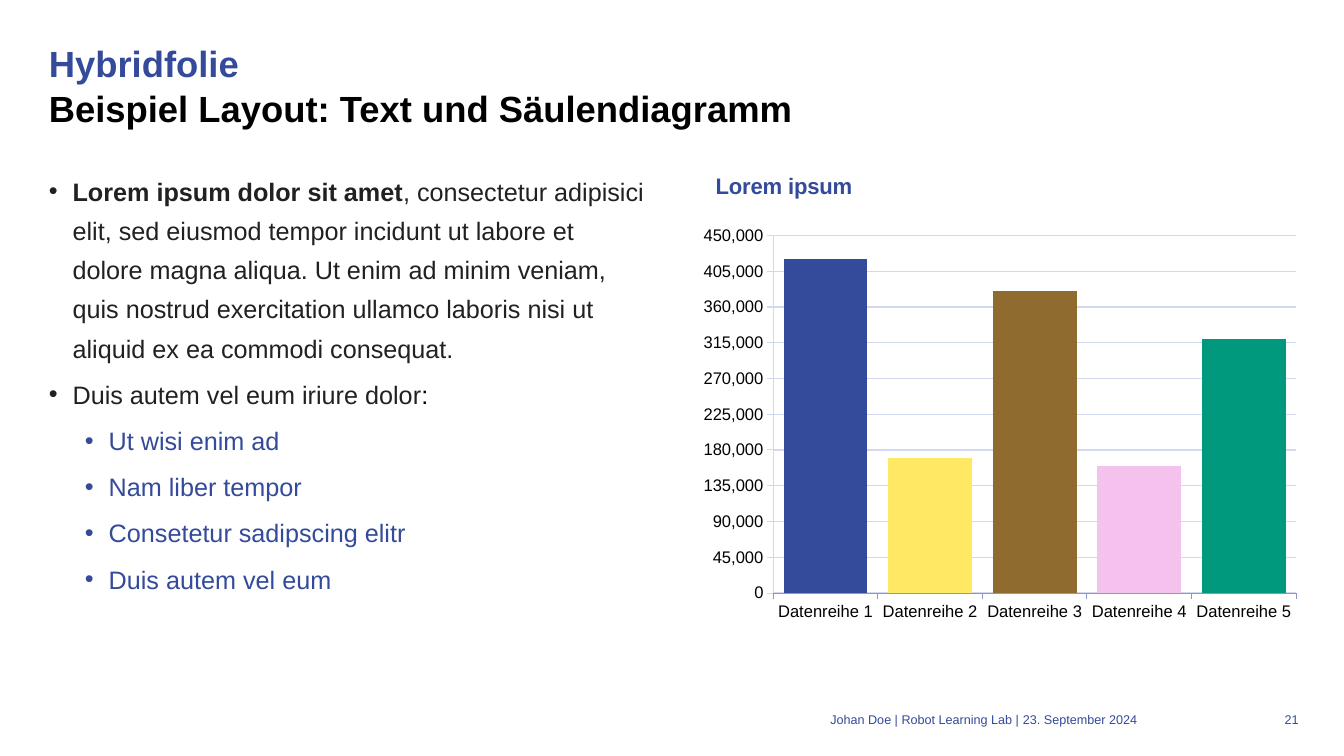
"""Build a slide with a bulleted text on the left and a column chart on the right."""
from pptx import Presentation
from pptx.chart.data import CategoryChartData
from pptx.dml.color import RGBColor
from pptx.enum.chart import XL_CHART_TYPE as ChartType, XL_TICK_MARK as Tick
from pptx.enum.text import MSO_ANCHOR as Anchor, MSO_AUTO_SIZE as AutoSize, PP_ALIGN as Align
from pptx.oxml.ns import qn
from pptx.util import Cm, Pt
from lxml.etree import SubElement

BLUE = RGBColor(0x34, 0x4A, 0x9A)
BLACK = RGBColor(0x00, 0x00, 0x00)
INK = RGBColor(0x20, 0x21, 0x22)
GRID = RGBColor(0xD2, 0xD8, 0xF0)
AXIS = RGBColor(0x8C, 0x96, 0xC8)
YELLOW = RGBColor(0xFF, 0xE8, 0x63)
BROWN = RGBColor(0x8F, 0x6B, 0x30)
PINK = RGBColor(0xF5, 0xC2, 0xED)
GREEN = RGBColor(0x00, 0x99, 0x7D)
SERIES = RGBColor(0xA2, 0xAD, 0xEB)
LEFT, CONTENT_TOP, COLUMN_WIDTH = Cm(1.23), Cm(4.22), Cm(15.01)


def style(font, size, color, bold=False):
    font.name, font.size, font.bold = "Arial", Pt(size), bold
    font.color.rgb = color


def set_frame(box, left, top, width, height, inset=0):
    box.left, box.top, box.width, box.height = left, top, width, height
    frame = box.text_frame
    frame.margin_left = inset
    frame.margin_top = frame.margin_right = frame.margin_bottom = 0
    frame.word_wrap, frame.auto_size = True, AutoSize.NONE
    frame.vertical_anchor = Anchor.TOP
    return frame


deck = Presentation()
deck.slide_width, deck.slide_height = Cm(33.87), Cm(19.05)
page = deck.slides.add_slide(deck.slide_layouts[1])

heading = set_frame(page.shapes.title, LEFT, Cm(1), Cm(31.5), Cm(2.69))
heading.text = "Hybridfolie\vBeispiel Layout: Text und Säulendiagramm"
para = heading.paragraphs[0]
para.alignment, para.line_spacing = Align.LEFT, Pt(32)
for span, color in zip(para.runs, (BLUE, BLACK)):
    style(span.font, 26, color, True)

bullets = [
    (0, [("Lorem ipsum dolor sit amet", INK, True),
         (", consectetur adipisici elit, sed eiusmod tempor incidunt ut labore et dolore magna "
          "aliqua. Ut enim ad minim veniam, quis nostrud exercitation ullamco laboris nisi ut "
          "aliquid ex ea commodi consequat.", INK, False)]),
    (0, [("Duis autem vel eum iriure dolor", INK, False), (":", BLACK, False)]),
    (1, [("Ut wisi enim ad", BLUE, False)]),
    (1, [("Nam liber tempor", BLUE, False)]),
    (1, [("Consetetur sadipscing elitr", BLUE, False)]),
    (1, [("Duis autem vel eum", BLUE, False)]),
]
body = set_frame(page.placeholders[1], LEFT, Cm(4.21), COLUMN_WIDTH, Cm(13))
for number, (level, parts) in enumerate(bullets):
    para = body.add_paragraph() if number else body.paragraphs[0]
    properties = para._p.get_or_add_pPr()
    properties.set("marL", str(Cm(0.6 + 0.91 * level)))
    properties.set("indent", str(-Cm(0.6)))
    SubElement(properties, qn("a:buChar")).set("char", "•")
    para.level, para.line_spacing = level, Pt(28)
    para.space_before = Pt(5 if number else 0)
    para.space_after = Pt(0)
    for text, color, bold in parts:
        span = para.add_run()
        span.text = text
        style(span.font, 18, color, bold)

data = CategoryChartData(number_format="#,##0")
data.categories = [f"Datenreihe {number}" for number in range(1, 6)]
data.add_series("Series 1", (420000, 170000, 380000, 160000, 320000))
chart = page.shapes.add_chart(ChartType.COLUMN_STACKED, Cm(17.73), CONTENT_TOP,
                              COLUMN_WIDTH, Cm(12), data).chart
style(chart.font, 12, BLUE)
chart.has_legend = False
chart.has_title = True
chart_title = chart.chart_title.text_frame
chart_title.text = "Lorem ipsum"
style(chart_title.paragraphs[0].runs[0].font, 16, BLUE, True)

plot = chart.plots[0]
plot.gap_width, plot.overlap, plot.vary_by_categories = 25, 100, False
columns = plot.series[0]
columns.format.fill.solid()
columns.format.fill.fore_color.rgb = SERIES
for number, color in enumerate((BLUE, YELLOW, BROWN, PINK, GREEN)):
    fill = columns.points[number].format.fill
    fill.solid()
    fill.fore_color.rgb = color

values = chart.value_axis
values.minimum_scale, values.maximum_scale, values.major_unit = 0, 450000, 45000
values.has_major_gridlines = True
values.major_gridlines.format.line.color.rgb = GRID
values.major_gridlines.format.line.width = Pt(1)
values.tick_labels.number_format = "#,##0"
values.tick_labels.number_format_is_linked = False
for axis, color in ((values, GRID), (chart.category_axis, AXIS)):
    axis.major_tick_mark, axis.minor_tick_mark = Tick.OUTSIDE, Tick.NONE
    axis.format.line.color.rgb = color
    axis.format.line.width = Pt(0.75)
    style(axis.tick_labels.font, 12, BLACK)

plot_area = chart._chartSpace.find(".//" + qn("c:plotArea"))
title_layout = chart._chartSpace.find(".//" + qn("c:title")).find(qn("c:layout"))
plot_layout = plot_area.find(qn("c:layout"))
if plot_layout is None:
    plot_layout = SubElement(plot_area, qn("c:layout"))
    plot_area.insert(0, plot_layout)
layouts = (
    (title_layout, (("xMode", "edge"), ("yMode", "edge"), ("x", 0), ("y", 0))),
    (plot_layout, (("layoutTarget", "inner"), ("xMode", "edge"), ("yMode", "edge"),
                   ("x", 0.105), ("y", 0.143), ("w", 0.89), ("h", 0.751))),
)
for layout, settings in layouts:
    manual = SubElement(layout, qn("c:manualLayout"))
    for name, value in settings:
        SubElement(manual, qn("c:" + name)).set("val", str(value))

footers = (
    ("Johan Doe | Robot Learning Lab |", 8.28, 17.4, 0, Align.RIGHT),
    ("23. September 2024", 25.68, 3.99, 0.1, Align.LEFT),
    ("21", 31.74, 0.99, 0, Align.RIGHT),
)
for text, left, width, inset, alignment in footers:
    place = Cm(left), Cm(17.94), Cm(width), Cm(0.51)
    frame = set_frame(page.shapes.add_textbox(*place), *place, inset=Cm(inset))
    frame.text = text
    frame.paragraphs[0].alignment = alignment
    style(frame.paragraphs[0].runs[0].font, 9, BLUE)

deck.save("out.pptx")
